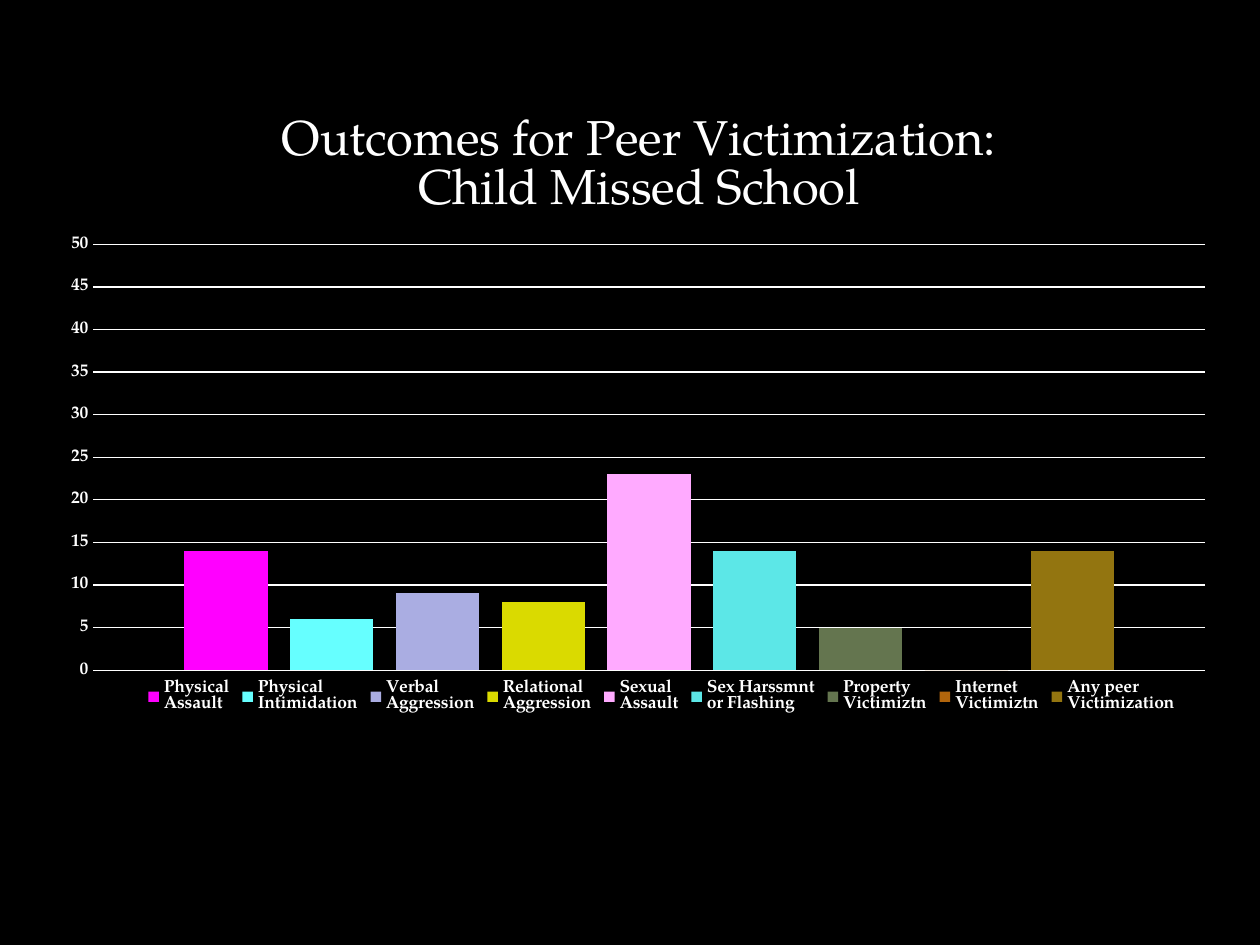
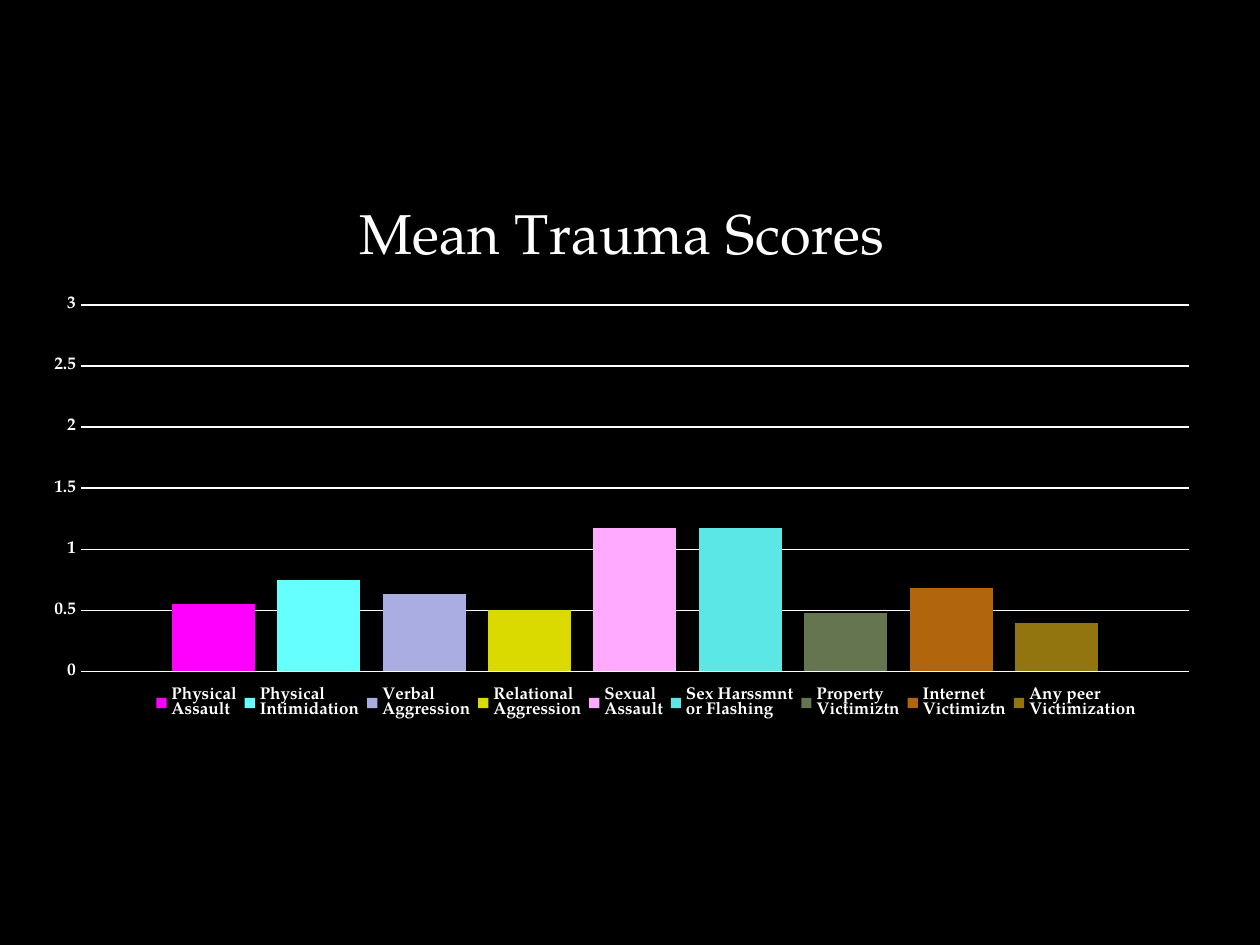
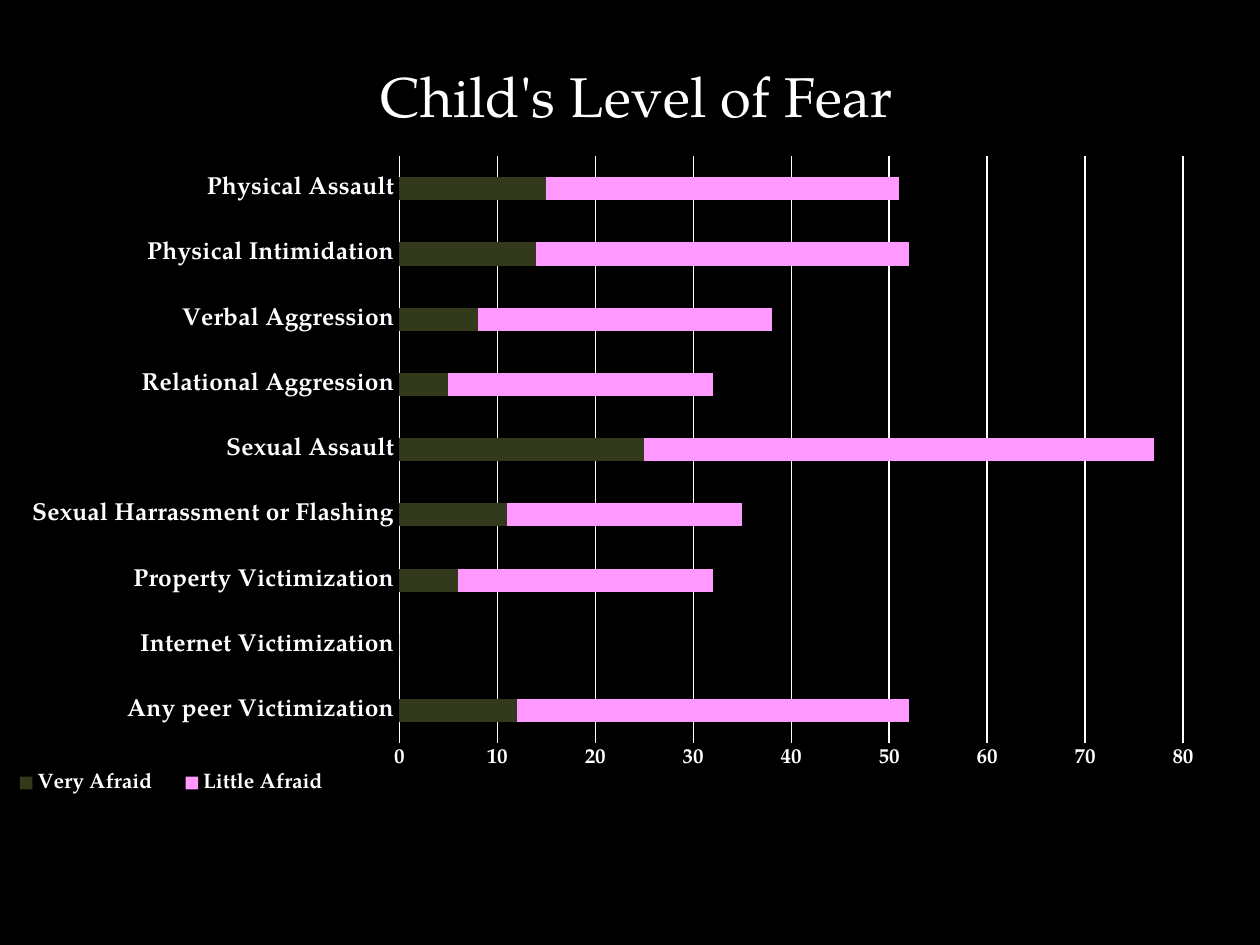
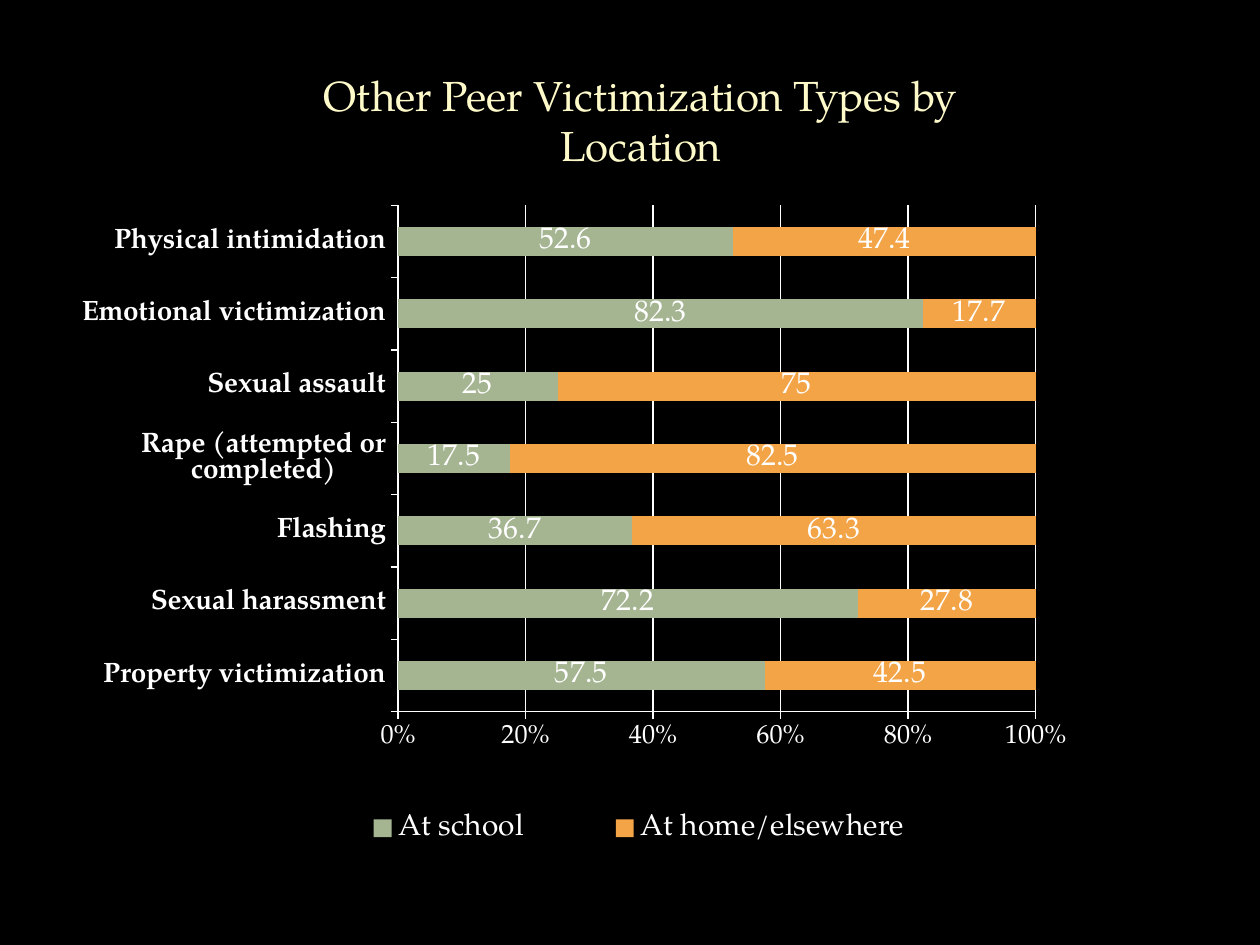
from lxml import etree
from pptx import Presentation
from pptx import util as u
from pptx.chart import data as cd
from pptx.dml.color import RGBColor
from pptx.enum import chart as ce
from pptx.enum import text as te
from pptx.oxml.ns import qn

BLACK = RGBColor(0x00, 0x00, 0x00)
WHITE = RGBColor(0xFF, 0xFF, 0xFF)
CREAM = RGBColor(0xFE, 0xFA, 0xC9)
OLIVE = RGBColor(0x33, 0x3A, 0x1C)
PINK = RGBColor(0xFF, 0x99, 0xFF)
SAGE = RGBColor(0xA5, 0xB5, 0x92)
ORANGE = RGBColor(0xF3, 0xA4, 0x47)

FONT = "TeX Gyre Pagella"
COLS, ROWS = 100, 75

TYPES = {
    "Physical\nAssault": RGBColor(0xFF, 0x00, 0xFF),
    "Physical\nIntimidation": RGBColor(0x66, 0xFF, 0xFF),
    "Verbal\nAggression": RGBColor(0xAA, 0xAD, 0xE2),
    "Relational\nAggression": RGBColor(0xDA, 0xDA, 0x00),
    "Sexual\nAssault": RGBColor(0xFF, 0xAA, 0xFF),
    "Sex Harssmnt\nor Flashing": RGBColor(0x5C, 0xE7, 0xE7),
    "Property\nVictimiztn": RGBColor(0x64, 0x75, 0x4F),
    "Internet\nVictimiztn": RGBColor(0xB1, 0x65, 0x0C),
    "Any peer\nVictimization": RGBColor(0x93, 0x75, 0x10),
}
MISSED = [14, 6, 9, 8, 23, 14, 5, 0, 14]
TRAUMA = [0.55, 0.75, 0.63, 0.5, 1.17, 1.17, 0.48, 0.68, 0.4]

# Each row: label, then one value per series, listed from bottom to top.
FEAR = [
    ("Any peer Victimization", 12, 40),
    ("Internet Victimization", 0, 0),
    ("Property Victimization", 6, 26),
    ("Sexual Harrassment or Flashing", 11, 24),
    ("Sexual Assault", 25, 52),
    ("Relational Aggression", 5, 27),
    ("Verbal Aggression", 8, 30),
    ("Physical Intimidation", 14, 38),
    ("Physical Assault", 15, 36),
]
PLACE = [
    ("Property victimization", 57.5, 42.5),
    ("Sexual harassment", 72.2, 27.8),
    ("Flashing", 36.7, 63.3),
    ("Rape (attempted or completed)", 17.5, 82.5),
    ("Sexual assault", 25, 75),
    ("Emotional victimization", 82.3, 17.7),
    ("Physical intimidation", 52.6, 47.4),
]


def style(font, size, bold=False, color=WHITE):
    font.name, font.size, font.bold = FONT, u.Pt(size), bold
    font.color.rgb = color


class Deck:
    """Holds the style, the current slide and the grid area of its chart."""

    def __init__(self):
        self.pres = Presentation()
        self.pres.slide_width, self.pres.slide_height = u.Inches(10), u.Inches(7.5)
        self.slide = None
        self.frame = None

    def page(self):
        self.slide = self.pres.slides.add_slide(self.pres.slide_layouts[6])
        fill = self.slide.background.fill
        fill.solid()
        fill.fore_color.rgb = BLACK

    def area(self, col, row, wide, high):
        """Turn grid columns and rows into lengths."""
        dx, dy = self.pres.slide_width / COLS, self.pres.slide_height / ROWS
        return [u.Emu(round(n)) for n in (col * dx, row * dy, wide * dx, high * dy)]

    def place(self, owner, index, col, row, wide=None, high=None, inner=False):
        """Fix a chart part at a grid place of the slide."""
        left, top, width, height = self.frame
        for old in owner.findall(qn("c:layout")):
            owner.remove(old)
        layout = etree.Element(qn("c:layout"))
        owner.insert(index, layout)
        manual = etree.SubElement(layout, qn("c:manualLayout"))
        parts = [("layoutTarget", "inner")] if inner else []
        parts += [("xMode", "edge"), ("yMode", "edge")]
        parts += [("x", (col - left) / width), ("y", (row - top) / height)]
        if wide:
            parts += [("w", wide / width), ("h", high / height)]
        for tag, val in parts:
            etree.SubElement(manual, qn("c:" + tag)).set("val", str(val))

    def text(self, words, area, size, color):
        frame = self.slide.shapes.add_textbox(*self.area(*area)).text_frame
        frame.word_wrap = True
        frame.auto_size = te.MSO_AUTO_SIZE.SHAPE_TO_FIT_TEXT
        frame.text = words
        para = frame.paragraphs[0]
        para.alignment = te.PP_ALIGN.CENTER
        style(para.runs[0].font, size, color=color)

    def chart(self, kind, area, inner, cats, series, size, gap, lap, bold=False):
        """Add a chart; series holds (name, values, colour) rows."""
        self.frame = area
        data = cd.CategoryChartData()
        data.categories = cats
        for name, vals, _ in series:
            data.add_series(name, vals)
        chart = self.slide.shapes.add_chart(kind, *self.area(*area), data).chart
        style(chart.font, size, bold)
        chart.has_title = False
        plot = chart.plots[0]
        plot.gap_width, plot.overlap, plot.vary_by_categories = gap, lap, False
        self.place(plot._element.getparent(), 0, *inner, inner=True)
        for bar, (_, _, color) in zip(plot.series, series):
            bar.format.fill.solid()
            bar.format.fill.fore_color.rgb = color
            bar.invert_if_negative = False
        return chart

    def title(self, chart, words, size, spot=None):
        chart.has_title = True
        frame = chart.chart_title.text_frame
        frame.text = words
        for para in frame.paragraphs:
            for run in para.runs:
                style(run.font, size)
        chart.chart_title.include_in_layout = False
        if spot:
            self.place(chart.chart_title._element, 1, *spot)

    def legend(self, chart, size, spot, bold=False, side="BOTTOM"):
        chart.has_legend = True
        legend = chart.legend
        legend.position = ce.XL_LEGEND_POSITION[side]
        legend.include_in_layout = False
        style(legend.font, size, bold)
        self.place(legend._element, 1, *spot)

    def axis(self, axis, size, bold=False, tick="NONE", line=True):
        axis.major_tick_mark = ce.XL_TICK_MARK[tick]
        axis.minor_tick_mark = ce.XL_TICK_MARK.NONE
        style(axis.tick_labels.font, size, bold)
        if line:
            self.line(axis.format.line)
        else:
            axis.format.line.fill.background()

    def line(self, line):
        line.color.rgb, line.width = WHITE, u.Pt(0.75)

    def scale(self, chart, top, step, form="General"):
        axis = chart.value_axis
        axis.minimum_scale, axis.maximum_scale, axis.major_unit = 0, top, step
        axis.has_major_gridlines = True
        self.line(axis.major_gridlines.format.line)
        axis.tick_labels.number_format = form
        axis.tick_labels.number_format_is_linked = False

    def columns(self, words, size, area, inner, vals, top, step, small, spot):
        """Add a slide with one coloured column per victimization type."""
        self.page()
        rows = [(name, [val], color) for (name, color), val in zip(TYPES.items(), vals)]
        chart = self.chart(ce.XL_CHART_TYPE.COLUMN_CLUSTERED, area, inner, ["1"], rows,
                           10, 219, -27)
        self.title(chart, words, size)
        chart.category_axis.visible = False
        self.axis(chart.value_axis, 10, True, line=False)
        self.scale(chart, top, step)
        self.legend(chart, small, spot, True)

    def bars(self, kind, area, inner, rows, names, colors, size, gap, bold=False):
        """Add a slide with stacked bars, one for each row."""
        self.page()
        cats, *vals = zip(*rows)
        series = list(zip(names, vals, colors))
        return self.chart(kind, area, inner, cats, series, size, gap, 100, bold)


def main():
    deck = Deck()
    deck.columns("Outcomes for Peer Victimization:\nChild Missed School", 28,
                 (3.8, 7.5, 93.8, 51.4), (7.4, 19.4, 88.25, 33.8),
                 MISSED, 50, 5, 10, (11.2, 53.3, 82.6, 4))
    deck.columns("Mean Trauma Scores", 32,
                 (2.5, 14.2, 93.8, 44.7), (6.4, 24.2, 88, 29.1),
                 TRAUMA, 3, 0.5, 9.7, (11.8, 53.8, 79, 4))

    fear = deck.bars(ce.XL_CHART_TYPE.BAR_STACKED, (-1.7, 2.5, 98.3, 62.5),
                     (31.7, 12.4, 62.2, 46.6), FEAR,
                     ("Very Afraid", "Little Afraid"), (OLIVE, PINK), 11, 182, True)
    deck.title(fear, "Child's Level of Fear", 32, (29.4, 4.75))
    deck.axis(fear.category_axis, 14, True)
    deck.axis(fear.value_axis, 12, True, line=False)
    deck.scale(fear, 80, 10)
    deck.legend(fear, 12, (-0.5, 60.6, 28.2, 3.1), True)

    where = deck.bars(ce.XL_CHART_TYPE.BAR_STACKED_100, (5.8, 14.1, 90, 55.1),
                      (31.6, 16.3, 50.6, 40.2), PLACE,
                      ("At school", "At home/elsewhere"), (SAGE, ORANGE), 17, 150)
    deck.axis(where.category_axis, 16, True, "OUTSIDE")
    deck.axis(where.value_axis, 15, tick="OUTSIDE")
    deck.scale(where, 1, 0.2, "0%")
    deck.legend(where, 17, (23.2, 63, 55.1, 5.5), side="RIGHT")
    for bar in where.plots[0].series:
        bar.data_labels.show_value = True
        style(bar.data_labels.font, 17)
    deck.text("Other Peer Victimization Types by Location", (19.2, 5, 63.3, 9.1), 24, CREAM)

    deck.pres.save("out.pptx")


if __name__ == "__main__":
    main()
